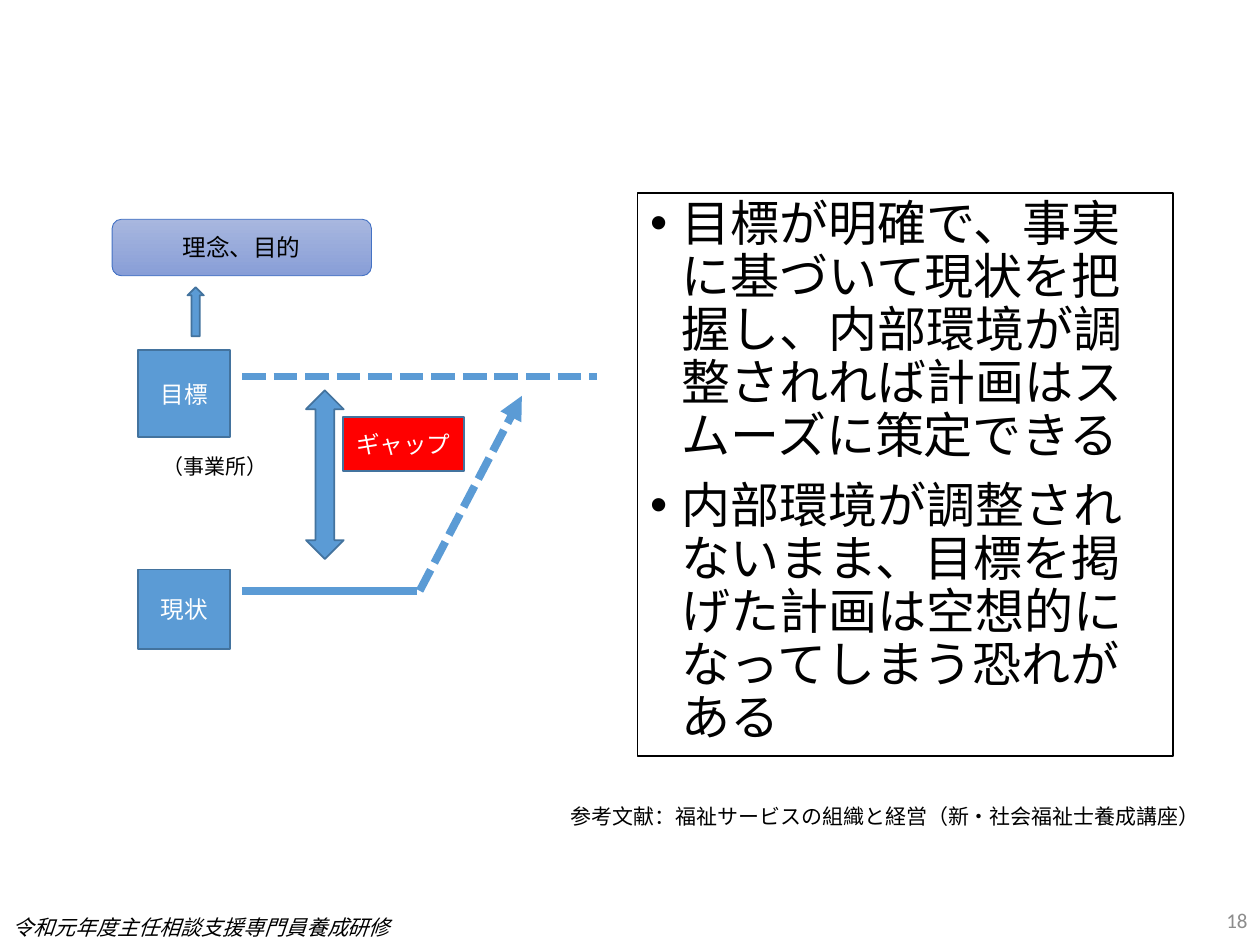
from lxml import etree
from pptx import Presentation
from pptx.dml.color import RGBColor
from pptx.enum.dml import MSO_LINE
from pptx.enum.shapes import MSO_CONNECTOR, MSO_SHAPE
from pptx.enum.text import MSO_ANCHOR, MSO_AUTO_SIZE, PP_ALIGN
from pptx.oxml.ns import qn
from pptx.util import Cm, Pt

STRAIGHT = MSO_CONNECTOR.STRAIGHT
DASH = MSO_LINE.SQUARE_DOT
RECTANGLE = MSO_SHAPE.RECTANGLE
ROUNDED = MSO_SHAPE.ROUNDED_RECTANGLE
UP_ARROW = MSO_SHAPE.UP_ARROW
UP_DOWN_ARROW = MSO_SHAPE.UP_DOWN_ARROW
MIDDLE, TOP = MSO_ANCHOR.MIDDLE, MSO_ANCHOR.TOP
CENTER, LEFT, RIGHT = PP_ALIGN.CENTER, PP_ALIGN.LEFT, PP_ALIGN.RIGHT
NO_AUTOFIT = MSO_AUTO_SIZE.NONE

BLUE, DARK_BLUE, RED = "5B9BD5", "43739E", "FF0000"
BLACK, WHITE, GREY = "000000", "FFFFFF", "8C8C8C"


def color(hex_string):
    return RGBColor.from_string(hex_string)


def style_text(paragraph, size, hex_string, alignment, font_name="Calibri"):
    paragraph.alignment = alignment
    paragraph.font.size = Pt(size)
    paragraph.font.name = font_name
    paragraph.font.color.rgb = color(hex_string)


presentation = Presentation()
presentation.slide_width, presentation.slide_height = Cm(25.4), Cm(19.05)
slide = presentation.slides.add_slide(presentation.slide_layouts[1])
title = slide.shapes.title
title.element.getparent().remove(title.element)

# Key points
body = slide.placeholders[1]
body.left, body.top, body.width, body.height = Cm(12.85), Cm(3.89), Cm(10.8), Cm(11.35)
body.line.color.rgb = color(BLACK)
body.line.width = Pt(0.75)
points = [
    "目標が明確で、事実に基づいて現状を把握し、内部環境が調整されれば計画はスムーズに策定できる",
    "内部環境が調整されないまま、目標を掲げた計画は空想的になってしまう恐れがある",
]
body.text_frame.text = "\n".join(points)
body.text_frame.auto_size = NO_AUTOFIT
for paragraph in body.text_frame.paragraphs:
    style_text(paragraph, 28, BLACK, LEFT)
    paragraph.line_spacing = 0.9
    paragraph.space_before = Pt(10)
    properties = paragraph._p.get_or_add_pPr()
    properties.set("marL", str(Cm(0.64)))
    properties.set("indent", str(-Cm(0.64)))

# Boxes and block arrows: kind, text, left, top, width, height, fill, text colour
diagram_shapes = [
    (ROUNDED, "理念、目的", 2.26, 4.42, 5.23, 1.14, None, BLACK),
    (RECTANGLE, "目標", 2.79, 7.06, 1.85, 1.75, BLUE, WHITE),
    (RECTANGLE, "現状", 2.79, 11.48, 1.85, 1.6, BLUE, WHITE),
    (UP_ARROW, "", 3.78, 5.79, 0.33, 0.99, BLUE, WHITE),
    (UP_DOWN_ARROW, "", 6.17, 7.87, 0.76, 3.4, BLUE, WHITE),
    (RECTANGLE, "ギャップ", 6.91, 8.41, 2.44, 1.09, RED, WHITE),
]
for kind, text, left, top, width, height, fill, text_color in diagram_shapes:
    shape = slide.shapes.add_shape(kind, Cm(left), Cm(top), Cm(width), Cm(height))
    shape.shadow.inherit = False
    if fill:
        shape.fill.solid()
        shape.fill.fore_color.rgb = color(fill)
        shape.line.color.rgb = color(DARK_BLUE)
        shape.line.width = Pt(1)
    else:
        shape.fill.gradient()
        shape.fill.gradient_angle = 270
        for stop, stop_color in zip(shape.fill.gradient_stops, ("A8B7DF", "889ED7")):
            stop.color.rgb = color(stop_color)
        shape.line.color.rgb = color("4472C4")
        shape.line.width = Pt(0.5)
    if text:
        shape.text_frame.text = text
        shape.text_frame.vertical_anchor = MIDDLE
        style_text(shape.text_frame.paragraphs[0], 13.5, text_color, CENTER)

# Target level, present level and the path between them
level_lines = [
    (4.88, 7.59, 12.04, 7.59, True, False),
    (4.88, 11.91, 8.41, 11.91, False, False),
    (8.46, 11.91, 10.52, 7.98, True, True),
]
for start_x, start_y, end_x, end_y, dashed, arrow in level_lines:
    connector = slide.shapes.add_connector(
        STRAIGHT, Cm(start_x), Cm(start_y), Cm(end_x), Cm(end_y))
    connector.line.color.rgb = color(BLUE)
    connector.line.width = Pt(4.5)
    if dashed:
        connector.line.dash_style = DASH
    if arrow:
        line_element = connector.line._get_or_add_ln()
        etree.SubElement(line_element, qn("a:tailEnd"), type="triangle")
    etree.SubElement(connector._element.spPr, qn("a:effectLst"))

# Label, reference, page number and footer
captions = [
    ("（事業所）", 3.02, 9.02, 2.8, 0.76, BLACK, LEFT, TOP, "Calibri", False),
    ("参考文献：福祉サービスの組織と経営（新・社会福祉士養成講座）",
     11.25, 16.08, 14.15, 0.76, BLACK, LEFT, TOP, "Calibri", False),
    ("18", 19.69, 18.03, 5.71, 1.02, GREY, RIGHT, MIDDLE, "Calibri", False),
    ("令和元年度主任相談支援専門員養成研修",
     0, 18.31, 8.59, 0.74, BLACK, LEFT, TOP, "Noto Sans CJK JP", True),
]
for (text, left, top, width, height, text_color,
     alignment, anchor, font_name, italic) in captions:
    caption = slide.shapes.add_textbox(Cm(left), Cm(top), Cm(width), Cm(height))
    caption.text_frame.text = text
    caption.text_frame.word_wrap = True
    caption.text_frame.vertical_anchor = anchor
    paragraph = caption.text_frame.paragraphs[0]
    style_text(paragraph, 12, text_color, alignment, font_name)
    paragraph.font.italic = italic

presentation.save("out.pptx")
